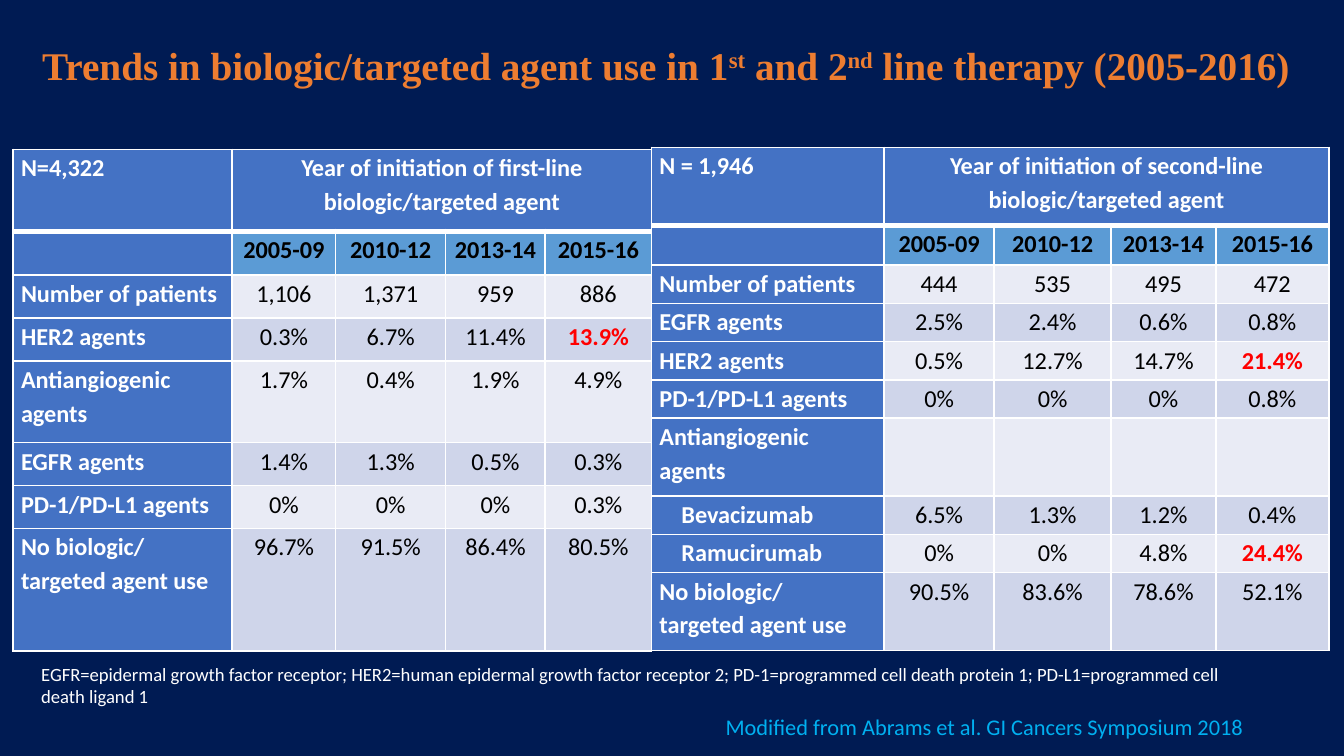
from dataclasses import dataclass

from lxml import etree
from pptx import Presentation
from pptx import util as u
from pptx.dml.color import RGBColor
from pptx.enum import text as t
from pptx.oxml import ns


@dataclass(frozen=True)
class Theme:
    back: str = "001B53"
    title: str = "ED7D31"
    white: str = "FFFFFF"
    black: str = "000000"
    head: str = "4472C4"
    years: str = "5B9BD5"
    bands: tuple = ("E9EBF5", "CFD5EA")
    alert: str = "FF0000"
    cite: str = "00B0F0"
    serif: str = "Times New Roman"
    sans: str = "Calibri"
    big: int = 21
    cell: int = 13
    note: int = 10
    credit: int = 12


def write(para, words, *, size, hue, font="Calibri", bold=False,
          align=t.PP_ALIGN.LEFT, lead=None, base=0):
    """Add words to a paragraph; a newline becomes a line break."""
    para.alignment = align
    if lead:
        para.line_spacing = lead
    for i, line in enumerate(words.split("\n")):
        if i:
            para.add_line_break()
        run = para.add_run()
        run.text = line
        run.font.size = u.Pt(size)
        run.font.name = font
        run.font.bold = bold
        run.font.color.rgb = RGBColor.from_string(hue)
        if base:
            run.font._element.set("baseline", str(base * 1000))


class Deck:
    def __init__(self, theme, wide, high):
        self.theme = theme
        self.prs = Presentation()
        self.prs.slide_width, self.prs.slide_height = u.Pt(wide), u.Pt(high)
        self.slide = self.prs.slides.add_slide(self.prs.slide_layouts[5])
        fill = self.slide.background.fill
        fill.solid()
        fill.fore_color.rgb = RGBColor.from_string(theme.back)

    def title(self, box, parts):
        shape = self.slide.shapes.title
        shape.left, shape.top, shape.width, shape.height = map(u.Pt, box)
        frame = shape.text_frame
        frame.auto_size = t.MSO_AUTO_SIZE.NONE
        frame.vertical_anchor = t.MSO_ANCHOR.MIDDLE
        for words, base in parts:
            write(frame.paragraphs[0], words, size=self.theme.big,
                  hue=self.theme.title, font=self.theme.serif, bold=True,
                  align=t.PP_ALIGN.CENTER, lead=0.9, base=base)

    def label(self, box, words, wrap=True, **style):
        frame = self.slide.shapes.add_textbox(*map(u.Pt, box)).text_frame
        frame.word_wrap = wrap
        write(frame.paragraphs[0], words, **style)

    def edges(self, cell, row):
        """Draw white borders, thick under the top row."""
        props = cell._tc.get_or_add_tcPr()
        thick = {0: "lnB", 1: "lnT"}.get(row)
        for i, side in enumerate(("lnL", "lnR", "lnT", "lnB")):
            width = u.Pt(3 if side == thick else 1)
            line = etree.Element(ns.qn("a:" + side), w=str(width))
            fill = etree.SubElement(line, ns.qn("a:solidFill"))
            etree.SubElement(fill, ns.qn("a:srgbClr"), val=self.theme.white)
            props.insert(i, line)

    def cell(self, cell, row, col, words, hot):
        look = self.theme
        lead = row == 0 or col == 0
        cell.margin_left = cell.margin_right = u.Pt(4.3)
        cell.margin_top = cell.margin_bottom = 0
        cell.fill.solid()
        fill = look.head if lead else look.years if row == 1 else look.bands[row % 2]
        cell.fill.fore_color.rgb = RGBColor.from_string(fill)
        self.edges(cell, row)
        para = cell.text_frame.paragraphs[0]
        if not words:
            # An empty cell needs its own type size to keep the row low
            etree.SubElement(para._p, ns.qn("a:endParaRPr"), sz=str(look.cell * 100))
            return
        hue = look.white if lead else look.alert if hot else look.black
        write(para, words, size=look.cell, hue=hue, font=look.sans,
              bold=lead or row == 1 or hot, lead=1.15,
              align=t.PP_ALIGN.CENTER if col else t.PP_ALIGN.LEFT)

    def table(self, left, top, cols, rows, data, hot, inset=()):
        shape = self.slide.shapes.add_table(
            len(rows), len(cols), u.Pt(left), u.Pt(top),
            u.Pt(sum(cols)), u.Pt(sum(rows)))
        grid = shape.table
        for col, width in zip(grid.columns, cols):
            col.width = u.Pt(width)
        for row, height in zip(grid.rows, rows):
            row.height = u.Pt(height)
        for r, line in enumerate(data):
            line = line + [""] * (len(cols) - len(line))
            for c, words in enumerate(line):
                self.cell(grid.cell(r, c), r, c, words, words in hot)
            if line[0] in inset:
                para = grid.cell(r, 0).text_frame.paragraphs[0]
                para._p.get_or_add_pPr().set("marL", str(u.Pt(11.8)))
        grid.cell(0, 1).merge(grid.cell(0, len(cols) - 1))


YEARS = ["", "2005-09", "2010-12", "2013-14", "2015-16"]
NONE = "No biologic/\ntargeted agent use"

FIRST = [
    ["N=4,322", "Year of initiation of first-line biologic/targeted agent"],
    YEARS,
    ["Number of patients", "1,106", "1,371", "959", "886"],
    ["HER2 agents", "0.3%", "6.7%", "11.4%", "13.9%"],
    ["Antiangiogenic agents", "1.7%", "0.4%", "1.9%", "4.9%"],
    ["EGFR agents", "1.4%", "1.3%", "0.5%", "0.3%"],
    ["PD-1/PD-L1 agents", "0%", "0%", "0%", "0.3%"],
    [NONE, "96.7%", "91.5%", "86.4%", "80.5%"],
]
SECOND = [
    ["N = 1,946", "Year of initiation of second-line biologic/targeted agent"],
    YEARS,
    ["Number of patients", "444", "535", "495", "472"],
    ["EGFR agents", "2.5%", "2.4%", "0.6%", "0.8%"],
    ["HER2 agents", "0.5%", "12.7%", "14.7%", "21.4%"],
    ["PD-1/PD-L1 agents", "0%", "0%", "0%", "0.8%"],
    ["Antiangiogenic agents"],
    ["Bevacizumab", "6.5%", "1.3%", "1.2%", "0.4%"],
    ["Ramucirumab", "0%", "0%", "4.8%", "24.4%"],
    [NONE, "90.5%", "83.6%", "78.6%", "52.1%"],
]


def main():
    look = Theme()
    deck = Deck(look, 720, 405)

    # Title with raised ordinals
    deck.title((9.4, 19.4, 694.8, 33.8), [
        ("Trends in biologic/targeted agent use in 1", 0), ("st", 30),
        (" and 2", 0), ("nd", 30), (" line therapy (2005-2016)", 0)])

    # First-line therapy
    deck.table(7, 80, [117.4, 55.4, 59, 53.3, 56.9],
               [43.8, 23.6] + [23] * 2 + [43.8] + [23] * 2 + [65.5],
               FIRST, {"13.9%"})

    # Second-line therapy
    deck.table(349, 79, [124.6, 59, 62.6, 56.2, 60.5],
               [41.7, 21.4] + [20.5] * 4 + [41.7] + [20.5] * 2 + [41.7],
               SECOND, {"21.4%", "24.4%"}, {"Bevacizumab", "Ramucirumab"})

    # Abbreviations and credit
    deck.label((15, 351.4, 648, 44),
               "EGFR=epidermal growth factor receptor; HER2=human epidermal "
               "growth factor receptor 2; PD-1=programmed cell death protein 1; "
               "PD-L1=programmed cell death ligand 1",
               size=look.note, hue=look.white, font=look.sans)
    deck.label((381.6, 378.7, 298, 21.6),
               "Modified from Abrams et al. GI Cancers Symposium 2018",
               wrap=False, size=look.credit, hue=look.cite, font=look.sans)

    deck.prs.save("out.pptx")


if __name__ == "__main__":
    main()
